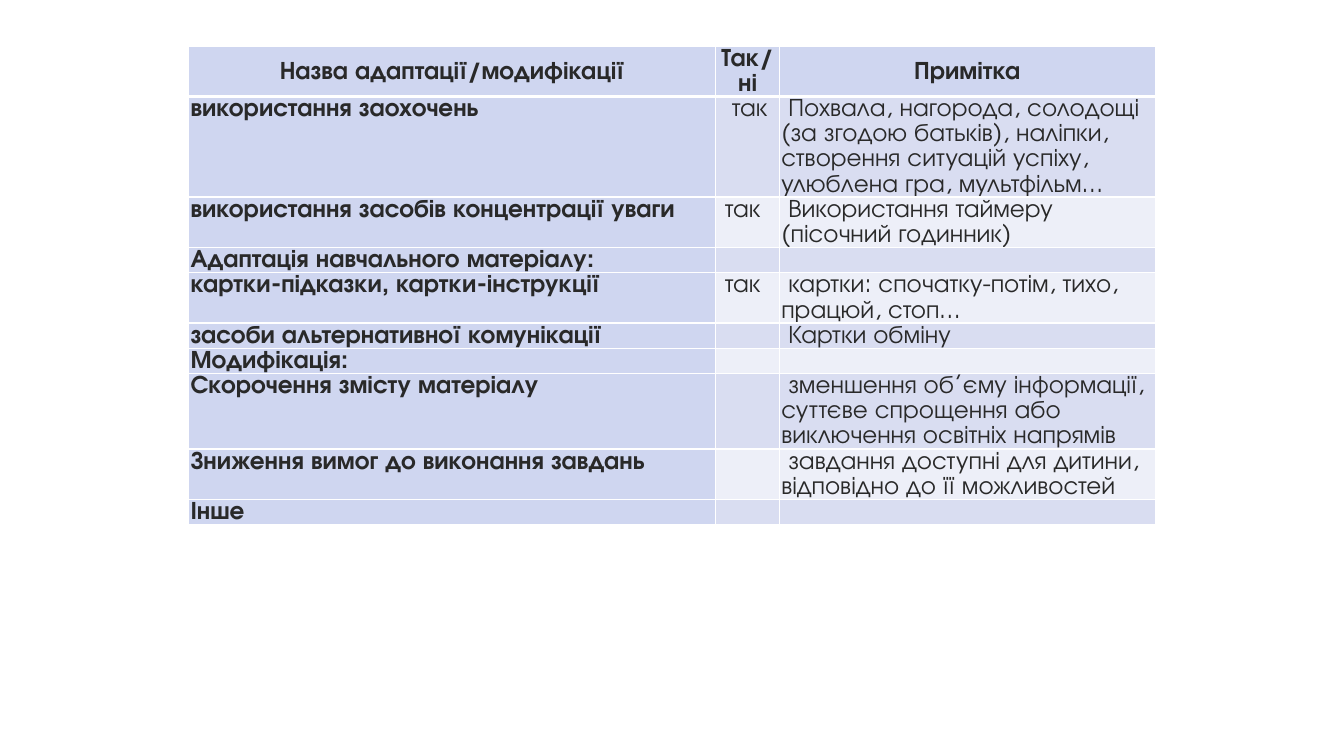
from typing import NamedTuple

from lxml.etree import SubElement
from pptx import Presentation
from pptx.dml.color import RGBColor
from pptx.enum.text import MSO_ANCHOR, PP_ALIGN
from pptx.oxml.ns import qn
from pptx.table import _Cell
from pptx.util import Inches, Pt

COLORS = {
    "text": "292929",
    "label": "CFD6F0",
    "odd": "D9DDF1",
    "even": "EDEFF8",
    "border": "FFFFFF",
}
FONT = "TeX Gyre Adventor"
COLUMN_WIDTHS = (5.23, 0.63, 3.73)
HEADER_HEIGHT = 0.34
ROW_HEIGHT = 0.25
NOTE_INDENT = 0.07


class Adaptation(NamedTuple):
    name: str
    used: str = ""
    note: str = ""
    used_indent: float = NOTE_INDENT


HEADER = Adaptation("Назва адаптації/модифікації", "Так/ні", "Примітка")
ADAPTATIONS = [
    Adaptation("використання заохочень", "так",
               "Похвала, нагорода, солодощі (за згодою батьків), наліпки, "
               "створення ситуацій успіху, улюблена гра, мультфільм…", 0.14),
    Adaptation("використання засобів концентрації уваги", "так",
               "Використання таймеру (пісочний годинник)"),
    Adaptation("Адаптація навчального матеріалу:"),
    Adaptation("картки-підказки, картки-інструкції", "так",
               "картки: спочатку-потім, тихо, працюй, стоп…"),
    Adaptation("засоби альтернативної комунікації", note="Картки обміну"),
    Adaptation("Модифікація:"),
    Adaptation("Скорочення змісту матеріалу",
               note="зменшення об’єму інформації, суттєве спрощення "
                    "або виключення освітніх напрямів"),
    Adaptation("Зниження вимог до виконання завдань",
               note="завдання доступні для дитини, відповідно до її можливостей"),
    Adaptation("Інше"),
]


def add_borders(cell: _Cell, bottom: float) -> None:
    """Line the cell in white; must run before the fill is set."""
    tc_pr = cell._tc.get_or_add_tcPr()
    for side, width in (("L", 1), ("R", 1), ("T", 1), ("B", bottom)):
        ln = SubElement(tc_pr, qn(f"a:ln{side}"), w=str(Pt(width)))
        fill = SubElement(ln, qn("a:solidFill"))
        SubElement(fill, qn("a:srgbClr"), val=COLORS["border"])


def fill_cell(cell: _Cell, text: str, color: str, bold: bool,
              indent: float = 0, header: bool = False) -> None:
    add_borders(cell, 3 if header else 1)
    cell.fill.solid()
    cell.fill.fore_color.rgb = RGBColor.from_string(COLORS[color])
    cell.margin_left = cell.margin_right = Inches(0.02)
    cell.margin_top = cell.margin_bottom = 0
    cell.vertical_anchor = MSO_ANCHOR.MIDDLE if header else MSO_ANCHOR.TOP

    p = cell.text_frame.paragraphs[0]
    p.text = text
    p.alignment = PP_ALIGN.CENTER if header else PP_ALIGN.LEFT
    p.line_spacing = 1.07
    p._p.get_or_add_pPr().set("indent", str(Inches(indent)))
    p.font.name = FONT
    p.font.size = Pt(18)
    p.font.bold = bold
    p.font.color.rgb = RGBColor.from_string(COLORS["text"])


def main() -> None:
    prs = Presentation()
    prs.slide_width, prs.slide_height = Inches(13.33), Inches(7.5)
    slide = prs.slides.add_slide(prs.slide_layouts[6])

    height = HEADER_HEIGHT + ROW_HEIGHT * len(ADAPTATIONS)
    table = slide.shapes.add_table(
        len(ADAPTATIONS) + 1, len(COLUMN_WIDTHS), Inches(1.87), Inches(0.46),
        Inches(sum(COLUMN_WIDTHS)), Inches(height)).table
    for column, width in zip(table.columns, COLUMN_WIDTHS):
        column.width = Inches(width)
    for i, row in enumerate(table.rows):
        row.height = Inches(ROW_HEIGHT if i else HEADER_HEIGHT)

    for col, title in enumerate(HEADER[:3]):
        fill_cell(table.cell(0, col), title, "label", True, header=True)
    for i, item in enumerate(ADAPTATIONS, start=1):
        band = "odd" if i % 2 else "even"
        fill_cell(table.cell(i, 0), item.name, "label", True)
        fill_cell(table.cell(i, 1), item.used, band, False, item.used_indent)
        fill_cell(table.cell(i, 2), item.note, band, False, NOTE_INDENT)

    prs.save("out.pptx")


if __name__ == "__main__":
    main()
